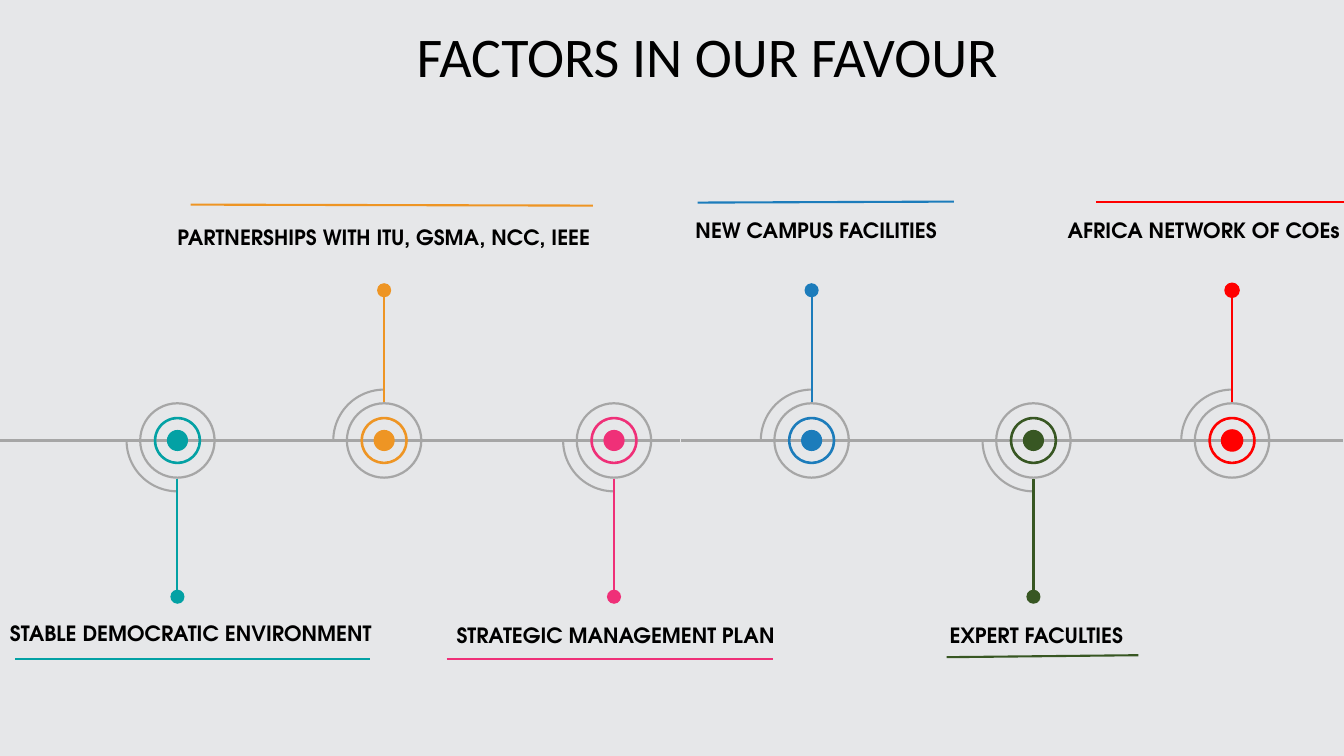
from lxml import etree
from pptx import Presentation
from pptx.dml.color import RGBColor
from pptx.enum import shapes, text
from pptx.oxml.ns import qn
from pptx.util import Inches, Pt

BACKGROUND = RGBColor(0xE6, 0xE7, 0xE9)
BLACK = RGBColor(0, 0, 0)
GREY = RGBColor(0xA6, 0xA6, 0xA6)
TEAL = RGBColor(0x03, 0xA1, 0xA4)
ORANGE = RGBColor(0xEE, 0x95, 0x24)
PINK = RGBColor(0xEF, 0x30, 0x78)
BLUE = RGBColor(0x1C, 0x7C, 0xBB)
GREEN = RGBColor(0x38, 0x57, 0x23)
RED = RGBColor(0xFF, 0, 0)

AXIS_Y = 4.37
RING_RADIUS = 0.38

prs = Presentation()
prs.slide_width, prs.slide_height = Inches(13.33), Inches(7.5)
slide = prs.slides.add_slide(prs.slide_layouts[5])
slide.background.fill.solid()
slide.background.fill.fore_color.rgb = BACKGROUND


def add_line(x1, y1, x2, y2, color):
    line = slide.shapes.add_connector(
        shapes.MSO_CONNECTOR.STRAIGHT, Inches(x1), Inches(y1), Inches(x2), Inches(y2))
    line.line.color.rgb = color
    line.line.width = Pt(1.5)
    etree.SubElement(line._element.spPr, qn("a:effectLst"))


def add_round(kind, x, y, size, color, adjustments=()):
    """Add a filled round shape centred on x, y."""
    disc = slide.shapes.add_shape(
        kind, Inches(x - size / 2), Inches(y - size / 2), Inches(size), Inches(size))
    disc.shadow.inherit = False
    for index, value in enumerate(adjustments):
        disc.adjustments[index] = value
    disc.fill.solid()
    disc.fill.fore_color.rgb = color
    disc.line.fill.background()
    return disc


# Title
title = slide.shapes.title
title.left, title.top = Inches(3.93), Inches(0.16)
title.width, title.height = Inches(6.17), Inches(0.77)
title.text_frame.text = "FACTORS IN OUR FAVOUR"
title.text_frame.vertical_anchor = text.MSO_ANCHOR.TOP
title.text_frame.paragraphs[0].alignment = text.PP_ALIGN.CENTER
title_font = title.text_frame.paragraphs[0].runs[0].font
title_font.name, title_font.size = "Calibri", Pt(40)
title_font.color.rgb = BLACK

# Timeline axis
for start, end in [(0, 1.68), (1.81, 4.28), (4.28, 6.74),
                   (6.75, 9.22), (9.2, 11.66), (11.64, 13.32)]:
    add_line(start, AXIS_Y, end, AXIS_Y, GREY)

# Factors: name, colour, centre x, label (left, top, width), rule (x1, y1, x2, y2)
factors = [
    ("STABLE DEMOCRATIC ENVIRONMENT", TEAL, 1.76, (0, 6.11, 3.83), (0.15, 6.54, 3.67, 6.54)),
    ("PARTNERSHIPS WITH ITU, GSMA, NCC, IEEE", ORANGE, 3.81, (1.66, 2.18, 4.38),
     (1.89, 2.03, 5.88, 2.04)),
    ("STRATEGIC MANAGEMENT PLAN", PINK, 6.09, (4.43, 6.13, 3.45), (4.43, 6.54, 7.67, 6.54)),
    ("NEW CAMPUS FACILITIES", BLUE, 8.05, (6.8, 2.11, 2.83), (6.92, 2.01, 9.46, 2)),
    ("EXPERT FACULTIES", GREEN, 10.25, (9.32, 6.13, 2.05), (9.39, 6.52, 11.29, 6.5)),
    ("AFRICA NETWORK OF COEs", RED, 12.22, (10.49, 2.11, 3.01), (10.87, 2, 13.33, 2)),
]

for number, (name, color, x, (left, top, width), rule) in enumerate(factors):
    points_up = number % 2 == 1
    direction = -1 if points_up else 1

    # Quarter arc beside the marker, on the side of the stem
    arc = add_round(shapes.MSO_SHAPE.ARC, x, AXIS_Y, 1.01, GREY, (54.2, 108.53))
    arc.fill.background()
    arc.line.color.rgb = GREY
    arc.line.width = Pt(1.5)
    arc.rotation = 90 if points_up else 0

    # Marker: centre dot and two rings
    centre_dot = add_round(shapes.MSO_SHAPE.OVAL, x, AXIS_Y, 0.21, color)
    add_round(shapes.MSO_SHAPE.DONUT, x, AXIS_Y, 0.47, color, (0.053,))
    add_round(shapes.MSO_SHAPE.DONUT, x, AXIS_Y, 2 * RING_RADIUS, GREY, (0.029,))

    # Stem with its end dot
    add_line(x, AXIS_Y + direction * 1.51, x, AXIS_Y + direction * RING_RADIUS, color)
    end_dot = add_round(shapes.MSO_SHAPE.OVAL, x, 2.88 if points_up else 5.92, 0.14, color)
    if color == RED:
        for dot in (centre_dot, end_dot):
            dot.line.color.rgb = RED
            dot.line.width = Pt(1)

    # Label and its rule
    label = slide.shapes.add_textbox(Inches(left), Inches(top), Inches(width), Inches(0.35))
    label.text_frame.text = name
    label.text_frame.word_wrap = False
    label_font = label.text_frame.paragraphs[0].runs[0].font
    label_font.name, label_font.size, label_font.bold = "TeX Gyre Adventor", Pt(15), True
    label_font.color.rgb = BLACK
    add_line(*rule, color)

prs.save("out.pptx")
